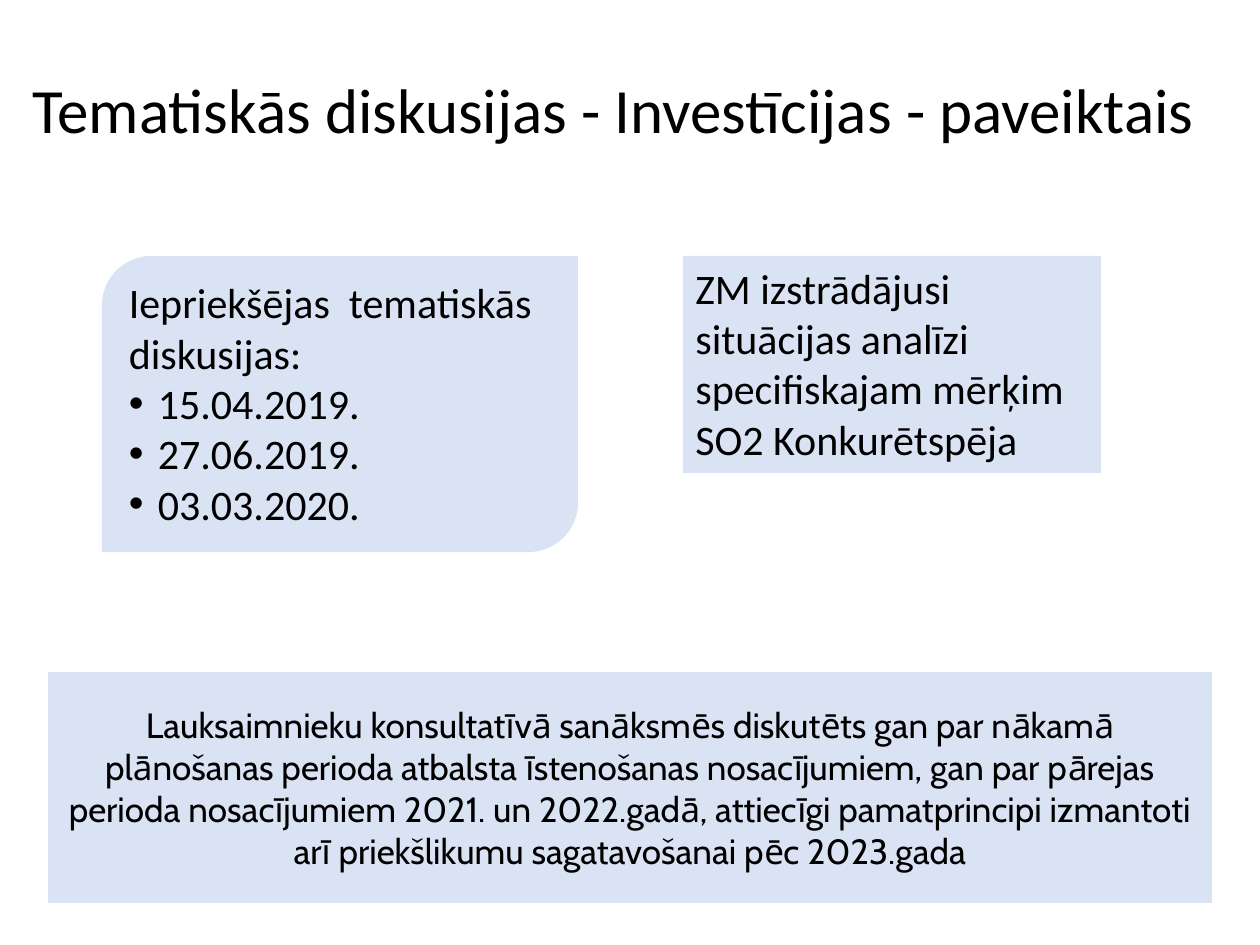
from pptx import Presentation
from pptx.dml.color import RGBColor
from pptx.enum.shapes import MSO_SHAPE as Kind
from pptx.enum.text import MSO_ANCHOR as Anchor, MSO_AUTO_SIZE as Fit, PP_ALIGN as Align
from pptx.util import Pt
from lxml.etree import SubElement

BLACK = RGBColor(0x00, 0x00, 0x00)
PALE = RGBColor(0xDA, 0xE3, 0xF3)
SCALE = 914400 / 126
NS = "{http://schemas.openxmlformats.org/drawingml/2006/main}"


def emu(px):
    return round(px * SCALE)


class Deck:
    def __init__(self, width, height):
        self.prs = Presentation()
        self.prs.slide_width = emu(width)
        self.prs.slide_height = emu(height)
        self.slide = self.prs.slides.add_slide(self.prs.slide_layouts[5])

    def label(self, frame, text, size, font="Calibri", align=Align.LEFT, anchor=Anchor.TOP):
        frame.text = text
        frame.word_wrap = True
        frame.auto_size = Fit.NONE
        frame.vertical_anchor = anchor
        for para in frame.paragraphs:
            para.alignment = align
            for run in para.runs:
                run.font.name = font
                run.font.size = Pt(size)
                run.font.color.rgb = BLACK

    def title(self, box, text):
        shape = self.slide.shapes.title
        shape.left, shape.top, shape.width, shape.height = map(emu, box)
        self.label(shape.text_frame, text, 36, anchor=Anchor.MIDDLE)
        shape.text_frame.paragraphs[0].line_spacing = 0.9

    def panel(self, box, text, size=24, kind=Kind.RECTANGLE, **style):
        shape = self.slide.shapes.add_shape(kind, *map(emu, box))
        shape.shadow.inherit = False
        shape.fill.solid()
        shape.fill.fore_color.rgb = PALE
        shape.line.fill.background()
        self.label(shape.text_frame, text, size, **style)
        return shape

    def bullet(self, paras, indent):
        for para in paras:
            props = para._p.get_or_add_pPr()
            props.set("marL", str(emu(indent)))
            props.set("indent", str(-emu(indent)))
            SubElement(props, NS + "buFont", typeface="Arial")
            SubElement(props, NS + "buChar", char="•")


def main():
    deck = Deck(1260, 945)
    deck.title((20, 55, 1218, 116), "Tematiskās diskusijas - Investīcijas - paveiktais")
    talks = deck.panel(
        (102, 256, 476, 296),
        "Iepriekšējas  tematiskās diskusijas:\n15.04.2019.\n27.06.2019.\n03.03.2020.",
        kind=Kind.ROUND_2_DIAG_RECTANGLE,
    )
    deck.bullet(talks.text_frame.paragraphs[1:], 29)
    deck.panel(
        (683, 256, 418, 217),
        "ZM izstrādājusi situācijas analīzi specifiskajam mērķim SO2 Konkurētspēja",
    )
    deck.panel(
        (48, 672, 1164, 231),
        "Lauksaimnieku konsultatīvā sanāksmēs diskutēts gan par nākamā plānošanas perioda "
        "atbalsta īstenošanas nosacījumiem, gan par pārejas perioda nosacījumiem 2021. un "
        "2022.gadā, attiecīgi pamatprincipi izmantoti arī priekšlikumu sagatavošanai pēc 2023.gada",
        size=20,
        font="Cabin",
        align=Align.CENTER,
        anchor=Anchor.MIDDLE,
    )
    deck.prs.save("out.pptx")


if __name__ == "__main__":
    main()
